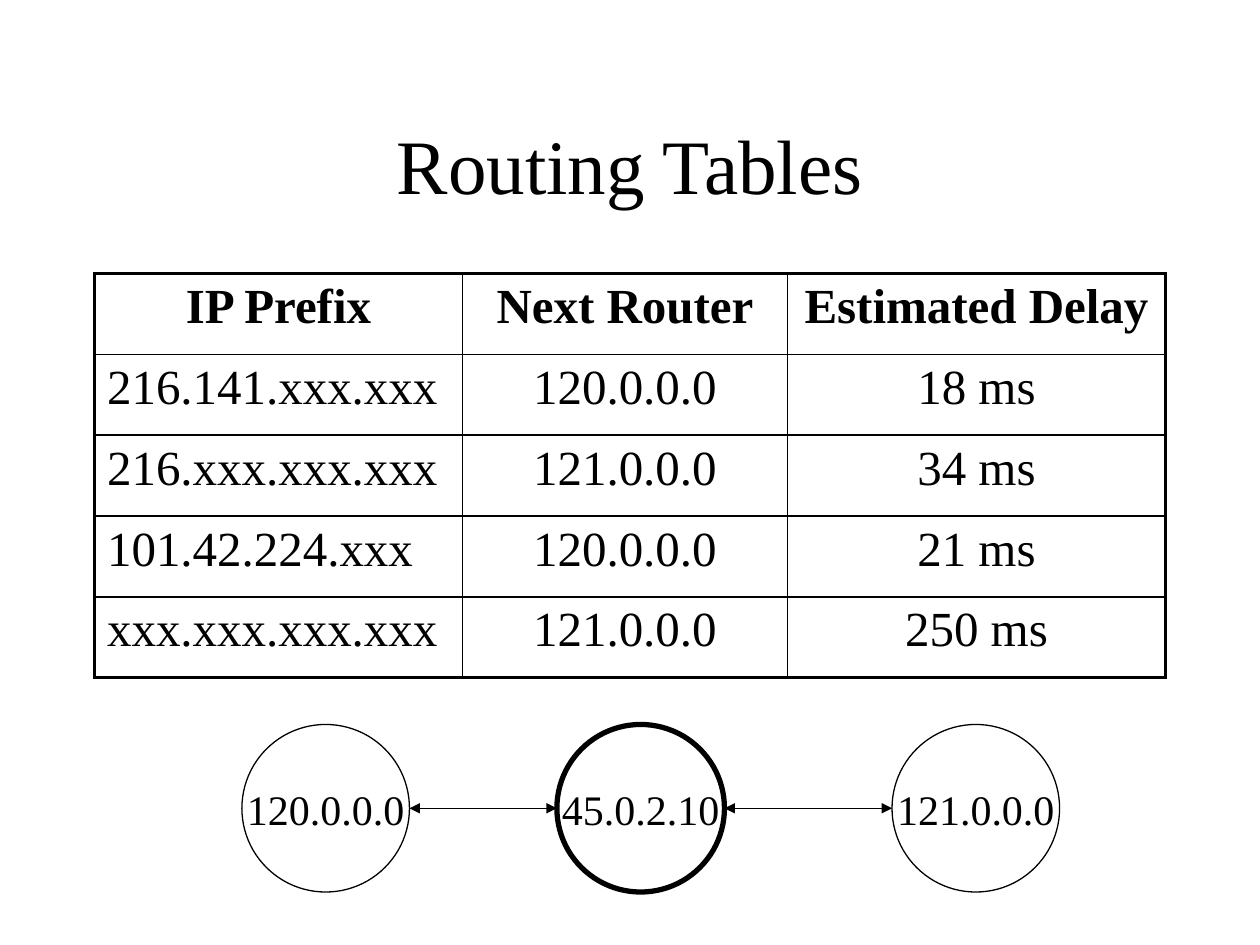
from lxml import etree
from pptx import Presentation
from pptx.dml.color import RGBColor
from pptx.enum.shapes import MSO_CONNECTOR, MSO_SHAPE
from pptx.enum.text import MSO_ANCHOR, PP_ALIGN
from pptx.oxml.ns import qn
from pptx.util import Inches, Pt

BLACK = RGBColor(0x00, 0x00, 0x00)
FONT = "Times New Roman"
LEFT, CENTER = PP_ALIGN.LEFT, PP_ALIGN.CENTER
MIDDLE = MSO_ANCHOR.MIDDLE
ELLIPSE = MSO_SHAPE.OVAL
STRAIGHT = MSO_CONNECTOR.STRAIGHT

OUTER, INNER, THIN, THICK = 2.25, 1, 0.75, 3

COLUMN_WIDTHS = (2.92, 2.58, 3)
ROUTES = (
    ("IP Prefix", "Next Router", "Estimated Delay"),
    ("216.141.xxx.xxx", "120.0.0.0", "18 ms"),
    ("216.xxx.xxx.xxx", "121.0.0.0", "34 ms"),
    ("101.42.224.xxx", "120.0.0.0", "21 ms"),
    ("xxx.xxx.xxx.xxx", "121.0.0.0", "250 ms"),
)

ROUTER_TOP, ROUTER_SIZE = 5.75, 1.33
# Address, left edge, outline width
ROUTERS = (
    ("120.0.0.0", 1.92, THIN),
    ("45.0.2.10", 4.42, THICK),
    ("121.0.0.0", 7.08, THIN),
)


def write(frame, text, size, align=CENTER, bold=False):
    paragraph = frame.paragraphs[0]
    paragraph.alignment = align
    run = paragraph.add_run()
    run.text = text
    run.font.name = FONT
    run.font.size = Pt(size)
    run.font.bold = bold
    run.font.color.rgb = BLACK
    return paragraph


def add_title(slide, text):
    title = slide.shapes.add_textbox(Inches(0.75), Inches(0.67), Inches(8.5), Inches(1.25))
    frame = title.text_frame
    frame.word_wrap = True
    frame.vertical_anchor = MIDDLE
    write(frame, text, 44)


def set_borders(cell, widths):
    properties = cell._tc.get_or_add_tcPr()
    for side, width in widths.items():
        line = etree.SubElement(properties, qn(f"a:ln{side}"), w=str(Pt(width)))
        fill = etree.SubElement(line, qn("a:solidFill"))
        etree.SubElement(fill, qn("a:srgbClr"), val=str(BLACK))


def set_space_before(paragraph, percent):
    spacing = etree.Element(qn("a:spcBef"))
    etree.SubElement(spacing, qn("a:spcPct"), val=str(percent * 1000))
    paragraph._p.get_or_add_pPr().insert(0, spacing)


def add_routing_table(slide):
    last_row, last_column = len(ROUTES) - 1, len(COLUMN_WIDTHS) - 1
    table = slide.shapes.add_table(
        len(ROUTES), len(COLUMN_WIDTHS),
        Inches(0.75), Inches(2.17), Inches(8.5), Inches(3.21)).table
    table.horz_banding = False
    for column, width in zip(table.columns, COLUMN_WIDTHS):
        column.width = Inches(width)

    for r, route in enumerate(ROUTES):
        for c, text in enumerate(route):
            cell = table.cell(r, c)
            set_borders(cell, {
                "L": OUTER if c == 0 else INNER,
                "R": OUTER if c == last_column else INNER,
                "T": OUTER if r == 0 else INNER,
                "B": OUTER if r == last_row else INNER,
            })
            cell.fill.background()
            align = LEFT if r > 0 and c == 0 else CENTER
            paragraph = write(cell.text_frame, text, 28, align, bold=r == 0)
            set_space_before(paragraph, 20)


def add_router(slide, address, left, outline):
    router = slide.shapes.add_shape(
        ELLIPSE, Inches(left), Inches(ROUTER_TOP), Inches(ROUTER_SIZE), Inches(ROUTER_SIZE))
    router.shadow.inherit = False
    router.fill.background()
    router.line.color.rgb = BLACK
    router.line.width = Pt(outline)
    frame = router.text_frame
    frame.word_wrap = False
    frame.vertical_anchor = MIDDLE
    write(frame, address, 24)


def add_link(slide, start, end):
    y = Inches(ROUTER_TOP + ROUTER_SIZE / 2)
    link = slide.shapes.add_connector(STRAIGHT, Inches(start), y, Inches(end), y)
    link.line.color.rgb = BLACK
    link.line.width = Pt(THIN)
    line = link.line._get_or_add_ln()
    for arrowhead in ("a:headEnd", "a:tailEnd"):
        etree.SubElement(line, qn(arrowhead), type="triangle")
    etree.SubElement(link._element.spPr, qn("a:effectLst"))


def main():
    presentation = Presentation()
    presentation.slide_width = Inches(10)
    presentation.slide_height = Inches(7.5)
    slide = presentation.slides.add_slide(presentation.slide_layouts[6])

    add_title(slide, "Routing Tables")
    add_routing_table(slide)

    # Routers and the links between neighbours
    for address, left, outline in ROUTERS:
        add_router(slide, address, left, outline)
    for (_, left, _), (_, next_left, _) in zip(ROUTERS, ROUTERS[1:]):
        add_link(slide, left + ROUTER_SIZE, next_left)

    presentation.save("out.pptx")


if __name__ == "__main__":
    main()
